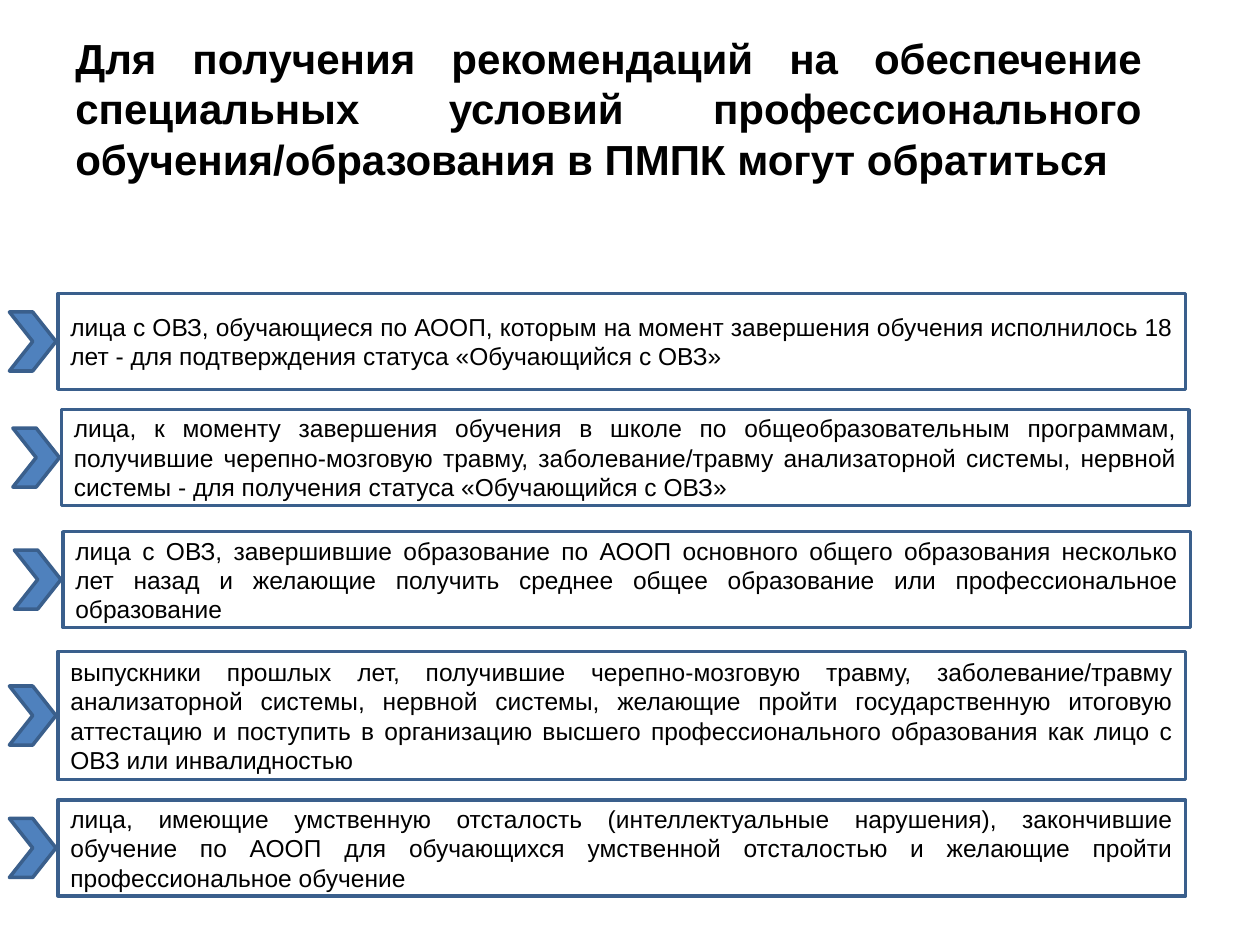
from dataclasses import dataclass

from pptx import Presentation
from pptx.dml.color import RGBColor
from pptx.enum.shapes import MSO_SHAPE
from pptx.enum.text import MSO_ANCHOR, MSO_AUTO_SIZE, PP_ALIGN
from pptx.shapes.autoshape import Shape
from pptx.slide import Slide
from pptx.util import Cm, Pt

COLORS = {"text": "000000", "chevron": "4F81BD", "outline": "3A5F8C"}
TITLE_FONT = {"name": "Arial", "size": Pt(24), "bold": True}
BODY_FONT = {"name": "Arial", "size": Pt(14), "bold": False}

BOX_WIDTH = 22.73
CHEVRON_WIDTH, CHEVRON_HEIGHT = 0.94, 1.19
CHEVRON_OFFSET = 0.98

TITLE = (
    "Для получения рекомендаций на обеспечение специальных условий "
    "профессионального обучения/образования в ПМПК могут обратиться"
)


@dataclass
class Applicant:
    """One category of applicants; lengths in centimetres."""
    left: float
    top: float
    text: str
    height: float = 1.93


APPLICANTS = [
    Applicant(1.17, 5.92,
              "лица с ОВЗ, обучающиеся по АООП, которым на момент завершения обучения "
              "исполнилось 18 лет - для подтверждения статуса «Обучающийся с ОВЗ»"),
    Applicant(1.24, 8.26,
              "лица, к моменту завершения обучения в школе по общеобразовательным программам, "
              "получившие черепно-мозговую травму, заболевание/травму анализаторной системы, "
              "нервной системы - для получения статуса «Обучающийся с ОВЗ»"),
    Applicant(1.27, 10.72,
              "лица с ОВЗ, завершившие образование по АООП основного общего образования "
              "несколько лет назад и желающие получить среднее общее образование или "
              "профессиональное образование"),
    Applicant(1.17, 13.13,
              "выпускники прошлых лет, получившие черепно-мозговую травму, заболевание/травму "
              "анализаторной системы, нервной системы, желающие пройти государственную итоговую "
              "аттестацию и поступить в организацию высшего профессионального образования "
              "как лицо с ОВЗ или инвалидностью", height=2.59),
    Applicant(1.17, 16.13,
              "лица, имеющие умственную отсталость (интеллектуальные нарушения), закончившие "
              "обучение по АООП для обучающихся умственной отсталостью и желающие пройти "
              "профессиональное обучение"),
]


def write_justified(box: Shape, text: str, font_format: dict) -> None:
    box.text_frame.word_wrap = True
    para = box.text_frame.paragraphs[0]
    para.alignment = PP_ALIGN.JUSTIFY
    span = para.add_run()
    span.text = text
    for name, value in font_format.items():
        setattr(span.font, name, value)
    span.font.color.rgb = RGBColor.from_string(COLORS["text"])


def add_outlined(page: Slide, kind: MSO_SHAPE, left: float, top: float,
                 width: float, height: float) -> Shape:
    shape = page.shapes.add_shape(kind, Cm(left), Cm(top), Cm(width), Cm(height))
    shape.shadow.inherit = False
    shape.line.color.rgb = RGBColor.from_string(COLORS["outline"])
    shape.line.width = Pt(2)
    return shape


def add_applicant(page: Slide, applicant: Applicant) -> None:
    """Draw the text box with a chevron centred on its left side."""
    box = add_outlined(page, MSO_SHAPE.RECTANGLE, applicant.left, applicant.top,
                       BOX_WIDTH, applicant.height)
    box.fill.background()
    box.text_frame.vertical_anchor = MSO_ANCHOR.MIDDLE
    write_justified(box, applicant.text, BODY_FONT)

    chevron_top = applicant.top + (applicant.height - CHEVRON_HEIGHT) / 2
    chevron = add_outlined(page, MSO_SHAPE.CHEVRON, applicant.left - CHEVRON_OFFSET,
                           chevron_top, CHEVRON_WIDTH, CHEVRON_HEIGHT)
    chevron.fill.solid()
    chevron.fill.fore_color.rgb = RGBColor.from_string(COLORS["chevron"])


def main() -> None:
    deck = Presentation()
    deck.slide_width, deck.slide_height = Cm(25.4), Cm(19.05)
    page = deck.slides.add_slide(deck.slide_layouts[6])

    title = page.shapes.add_textbox(Cm(1.27), Cm(0.53), Cm(22), Cm(3.33))
    write_justified(title, TITLE, TITLE_FONT)
    title.text_frame.auto_size = MSO_AUTO_SIZE.SHAPE_TO_FIT_TEXT

    for applicant in APPLICANTS:
        add_applicant(page, applicant)
    deck.save("out.pptx")


if __name__ == "__main__":
    main()
